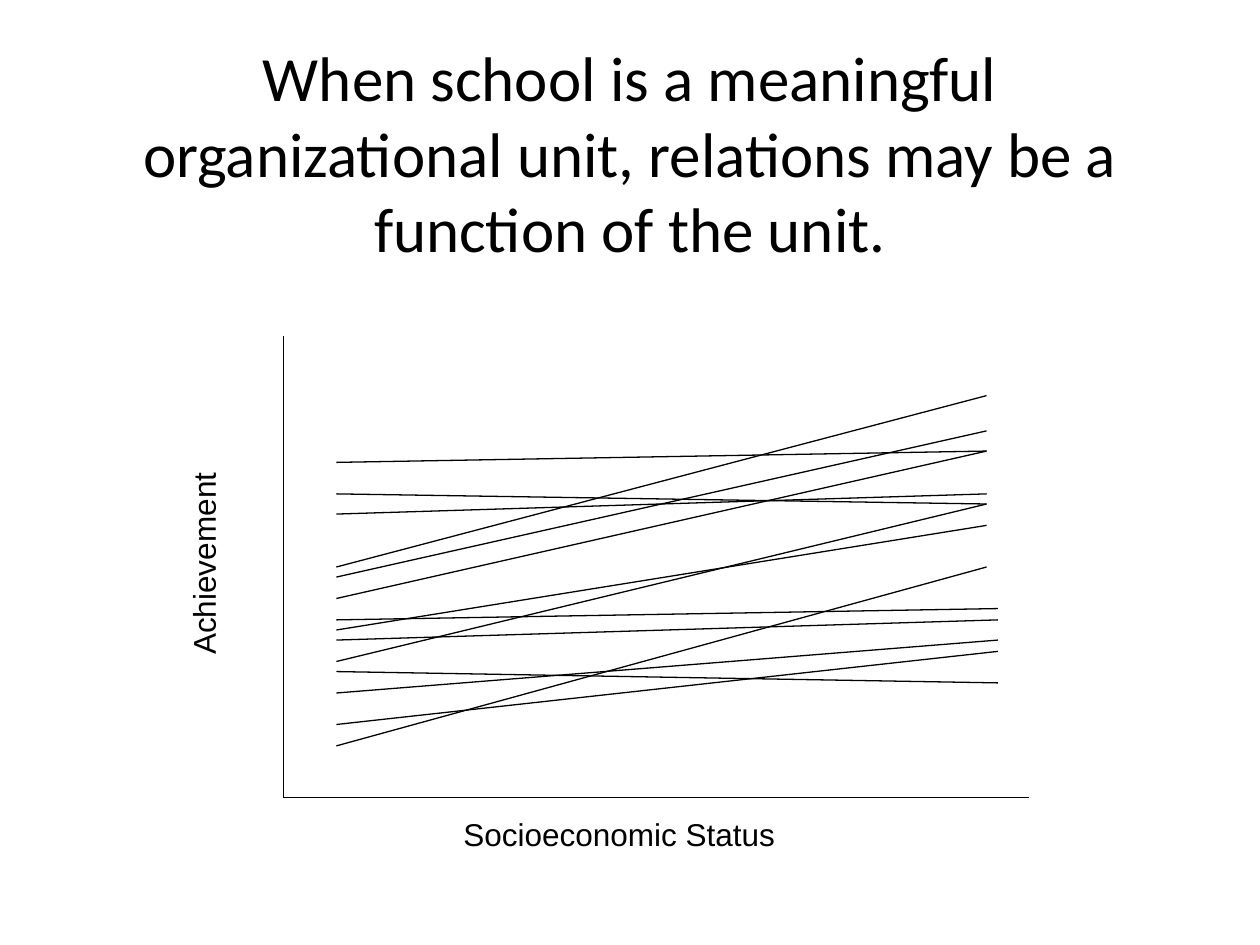
from lxml import etree
from pptx import Presentation
from pptx.dml.color import RGBColor
from pptx.enum.shapes import MSO_CONNECTOR, MSO_SHAPE
from pptx.enum.text import MSO_ANCHOR, PP_ALIGN
from pptx.oxml.ns import qn
from pptx.util import Inches, Pt

STRAIGHT = MSO_CONNECTOR.STRAIGHT
RECTANGLE = MSO_SHAPE.RECTANGLE
TOP, MIDDLE = MSO_ANCHOR.TOP, MSO_ANCHOR.MIDDLE
LEFT, CENTER = PP_ALIGN.LEFT, PP_ALIGN.CENTER
BLACK, WHITE = "000000", "FFFFFF"

deck = Presentation()
deck.slide_width, deck.slide_height = Inches(10), Inches(7.5)
page = deck.slides.add_slide(deck.slide_layouts[6])


def color(value):
    return RGBColor.from_string(value)


def write(box, text, font="Arial", size=18, align=LEFT, anchor=TOP):
    frame = box.text_frame
    frame.word_wrap = True
    frame.vertical_anchor = anchor
    para = frame.paragraphs[0]
    para.alignment = align
    span = para.add_run()
    span.text = text
    span.font.name = font
    span.font.size = Pt(size)
    span.font.color.rgb = color(BLACK)


# Axes, then one regression line per school: (x1, y1, x2, y2)
origin_x, origin_y = 2.25, 6.33
axes = [
    (origin_x, 2.67, origin_x, origin_y),
    (origin_x, origin_y, 8.17, origin_y),
]
start_x, near_end, far_end = 2.67, 7.83, 7.92
schools = [
    (5.08, far_end, 4.92),
    (4.92, far_end, 4.83),
    (5.33, far_end, 5.42),
    (3.92, near_end, 4),
    (4.08, near_end, 3.92),
    (3.67, near_end, 3.58),
    (4.58, near_end, 3.42),
    (5.75, far_end, 5.17),
    (5, near_end, 4.17),
    (4.5, near_end, 3.14),
    (4.75, near_end, 3.58),
    (5.5, far_end, 5.08),
    (5.92, near_end, 4.5),
    (5.25, near_end, 4),
]

# Axis labels: text, left, top, width, rotation
labels = [
    ("Socioeconomic Status", 3.58, 6.42, 3.67, 0),
    ("Achievement", 0.6, 3.98, 2.13, 270),
]
for text, left, top, width, rotation in labels:
    label = page.shapes.add_shape(
        RECTANGLE, Inches(left), Inches(top), Inches(width), Inches(0.5))
    label.shadow.inherit = False
    label.fill.solid()
    label.fill.fore_color.rgb = color(WHITE)
    label.line.fill.background()
    label.rotation = rotation
    write(label, text)

# Draw the axes and the school lines
for ends in axes + [(start_x, *school) for school in schools]:
    line = page.shapes.add_connector(STRAIGHT, *map(Inches, ends))
    line.line.color.rgb = color(BLACK)
    line.line.width = Pt(0.75)
    etree.SubElement(line._element.spPr, qn("a:effectLst"))

# Title
title = page.shapes.add_textbox(
    Inches(0.75), Inches(0.33), Inches(8.5), Inches(1.75))
write(title, "When school is a meaningful organizational unit, "
      "relations may be a function of the unit.",
      font="Calibri", size=36, align=CENTER, anchor=MIDDLE)

deck.save("out.pptx")
